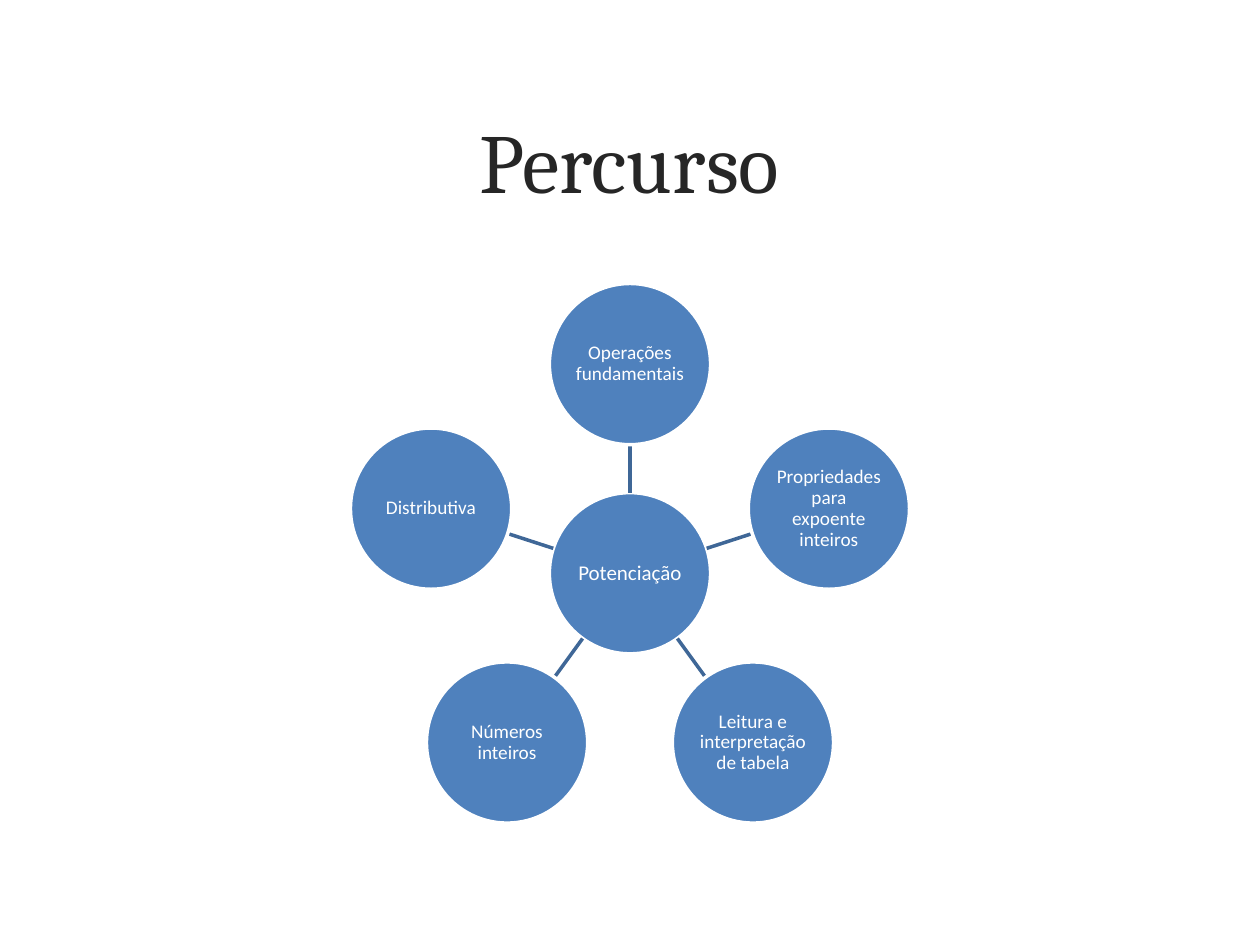
from math import cos, pi, sin

from lxml import etree
from pptx import Presentation
from pptx.dml.color import RGBColor
from pptx.enum.shapes import MSO_CONNECTOR, MSO_SHAPE
from pptx.enum.text import MSO_ANCHOR, PP_ALIGN
from pptx.oxml.ns import qn
from pptx.util import Inches, Pt

OVAL = MSO_SHAPE.OVAL
STRAIGHT = MSO_CONNECTOR.STRAIGHT
MIDDLE = MSO_ANCHOR.MIDDLE
CENTER = PP_ALIGN.CENTER

TITLE = "Percurso"
HUB = "Potenciação"
TOPICS = [
    "Operações fundamentais",
    "Propriedades para expoente inteiros",
    "Leitura e interpretação de tabela",
    "Números inteiros",
    "Distributiva",
]
HUB_X, HUB_Y = 5, 4.55
DIAMETER = 1.28
RING = 1.66
SPOKE_START, SPOKE_END = DIAMETER / 2, 1.03


def color(value):
    return RGBColor.from_string(value)


def write(tf, text, font, size, fill):
    tf.word_wrap = True
    tf.vertical_anchor = MIDDLE
    p = tf.paragraphs[0]
    p.alignment = CENTER
    r = p.add_run()
    r.text = text
    r.font.name = font
    r.font.size = Pt(size)
    r.font.color.rgb = color(fill)
    return p


def polar(radius, angle):
    return Inches(HUB_X + radius * sin(angle)), Inches(HUB_Y - radius * cos(angle))


def add_circle(s, center, text, size):
    d = Inches(DIAMETER)
    x, y = center
    sp = s.shapes.add_shape(OVAL, x - d // 2, y - d // 2, d, d)
    sp.shadow.inherit = False
    sp.fill.solid()
    sp.fill.fore_color.rgb = color("4F81BD")
    sp.line.color.rgb = color("FFFFFF")
    sp.line.width = Pt(2)
    tf = sp.text_frame
    tf.margin_left = tf.margin_right = tf.margin_top = tf.margin_bottom = Inches(0.01)
    write(tf, text, "Calibri", size, "FFFFFF").line_spacing = 0.9


def add_spoke(s, angle):
    line = s.shapes.add_connector(
        STRAIGHT, *polar(SPOKE_START, angle), *polar(SPOKE_END, angle))
    line.line.color.rgb = color("3F6797")
    line.line.width = Pt(2)
    etree.SubElement(line._element.spPr, qn("a:effectLst"))


def main():
    prs = Presentation()
    prs.slide_width, prs.slide_height = Inches(10), Inches(7.5)
    s = prs.slides.add_slide(prs.slide_layouts[5])

    title = s.shapes.title
    title.left, title.top = Inches(0.6), Inches(0.48)
    title.width, title.height = Inches(8.79), Inches(1.58)
    write(title.text_frame, TITLE, "Cambria", 48, "262626")

    add_circle(s, polar(0, 0), HUB, 12)
    for i, topic in enumerate(TOPICS):
        angle = 2 * pi * i / len(TOPICS)
        add_spoke(s, angle)
        add_circle(s, polar(RING, angle), topic, 11)

    prs.save("out.pptx")


if __name__ == "__main__":
    main()
